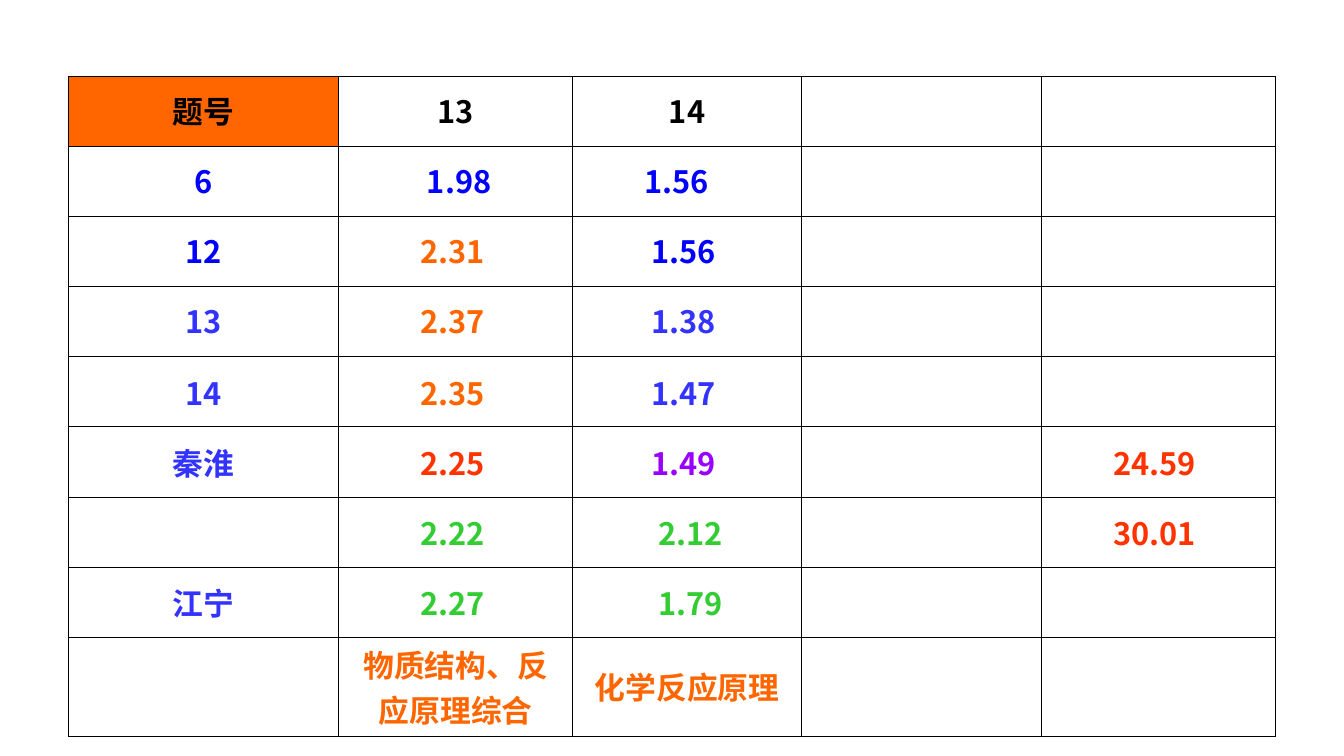
from lxml import etree
from pptx import Presentation
from pptx.dml.color import RGBColor
from pptx.enum.text import MSO_ANCHOR, PP_ALIGN
from pptx.oxml.ns import qn
from pptx.util import Inches, Pt

BLACK = RGBColor(0x00, 0x00, 0x00)
WHITE = RGBColor(0xFF, 0xFF, 0xFF)
BLUE = RGBColor(0x00, 0x00, 0xFF)
INDIGO = RGBColor(0x33, 0x33, 0xFF)
ORANGE = RGBColor(0xFF, 0x66, 0x00)
RED = RGBColor(0xFF, 0x33, 0x00)
PURPLE = RGBColor(0x99, 0x00, 0xFF)
GREEN = RGBColor(0x33, 0xCC, 0x33)

LATIN_FONT = "Calibri"
CHINESE_FONT = "Noto Sans CJK SC"
COLUMN_WIDTHS = (2.68, 2.32, 2.27, 2.38, 2.32)
ROW_HEIGHT = 0.695
TIGHT_ROWS = 4
EMPTY = ("", BLACK)

SCORES = (
    (("题号", BLACK), ("13", BLACK), ("14", BLACK)),
    (("6", BLUE), (" 1.98", BLUE), ("1.56", BLUE)),
    (("12", BLUE), ("2.31 ", ORANGE), ("1.56 ", BLUE)),
    (("13", INDIGO), ("2.37 ", ORANGE), ("1.38 ", INDIGO)),
    (("14", INDIGO), ("2.35 ", ORANGE), ("1.47 ", INDIGO)),
    (("秦淮", INDIGO), ("2.25 ", RED), ("1.49 ", PURPLE), EMPTY, ("24.59 ", RED)),
    (EMPTY, ("2.22 ", GREEN), (" 2.12", GREEN), EMPTY, ("30.01 ", RED)),
    (("江宁", INDIGO), ("2.27 ", GREEN), (" 1.79", GREEN)),
    (EMPTY, ("物质结构、反应原理综合", ORANGE), ("化学反应原理", ORANGE)),
)


def write_text(cell, text, color, font=CHINESE_FONT, size=22, tight=False):
    paragraph = cell.text_frame.paragraphs[0]
    paragraph.alignment = PP_ALIGN.CENTER
    if tight:
        paragraph.line_spacing = 0.9
        paragraph.space_before = Pt(10)
    run = paragraph.add_run()
    run.text = text
    run.font.name = font
    run.font.size = Pt(size)
    run.font.bold = True
    run.font.color.rgb = color
    east_asian = etree.SubElement(run.font._element, qn("a:ea"))
    east_asian.set("typeface", CHINESE_FONT)


def style_cell(cell, fill_color):
    cell.vertical_anchor = MSO_ANCHOR.MIDDLE
    properties = cell._tc.get_or_add_tcPr()
    for side in ("lnL", "lnR", "lnT", "lnB"):
        line = etree.SubElement(properties, qn(f"a:{side}"), w=str(Pt(0.5)))
        fill = etree.SubElement(line, qn("a:solidFill"))
        etree.SubElement(fill, qn("a:srgbClr"), val=str(BLACK))
    cell.fill.solid()
    cell.fill.fore_color.rgb = fill_color


def add_score_table(slide, left, top):
    frame = slide.shapes.add_table(
        len(SCORES), len(COLUMN_WIDTHS), Inches(left), Inches(top),
        Inches(sum(COLUMN_WIDTHS)), Inches(ROW_HEIGHT * len(SCORES)))
    table = frame.table
    table.first_row = False
    table.horz_banding = False
    for column, width in zip(table.columns, COLUMN_WIDTHS):
        column.width = Inches(width)
    for row in table.rows:
        row.height = Inches(ROW_HEIGHT)
    for cell in table.iter_cells():
        style_cell(cell, WHITE)
    for row_index, entries in enumerate(SCORES):
        for column_index, (text, color) in enumerate(entries):
            if text:
                write_text(table.cell(row_index, column_index), text, color,
                           font=CHINESE_FONT if row_index or column_index else LATIN_FONT,
                           tight=row_index < TIGHT_ROWS)
    table.cell(0, 0).fill.fore_color.rgb = ORANGE
    table.cell(1, 2).margin_right = Inches(0.31)


def main():
    presentation = Presentation()
    presentation.slide_width = Inches(13.33)
    presentation.slide_height = Inches(7.5)
    slide = presentation.slides.add_slide(presentation.slide_layouts[6])
    add_score_table(slide, 0.68, 0.76)
    presentation.save("out.pptx")


if __name__ == "__main__":
    main()
